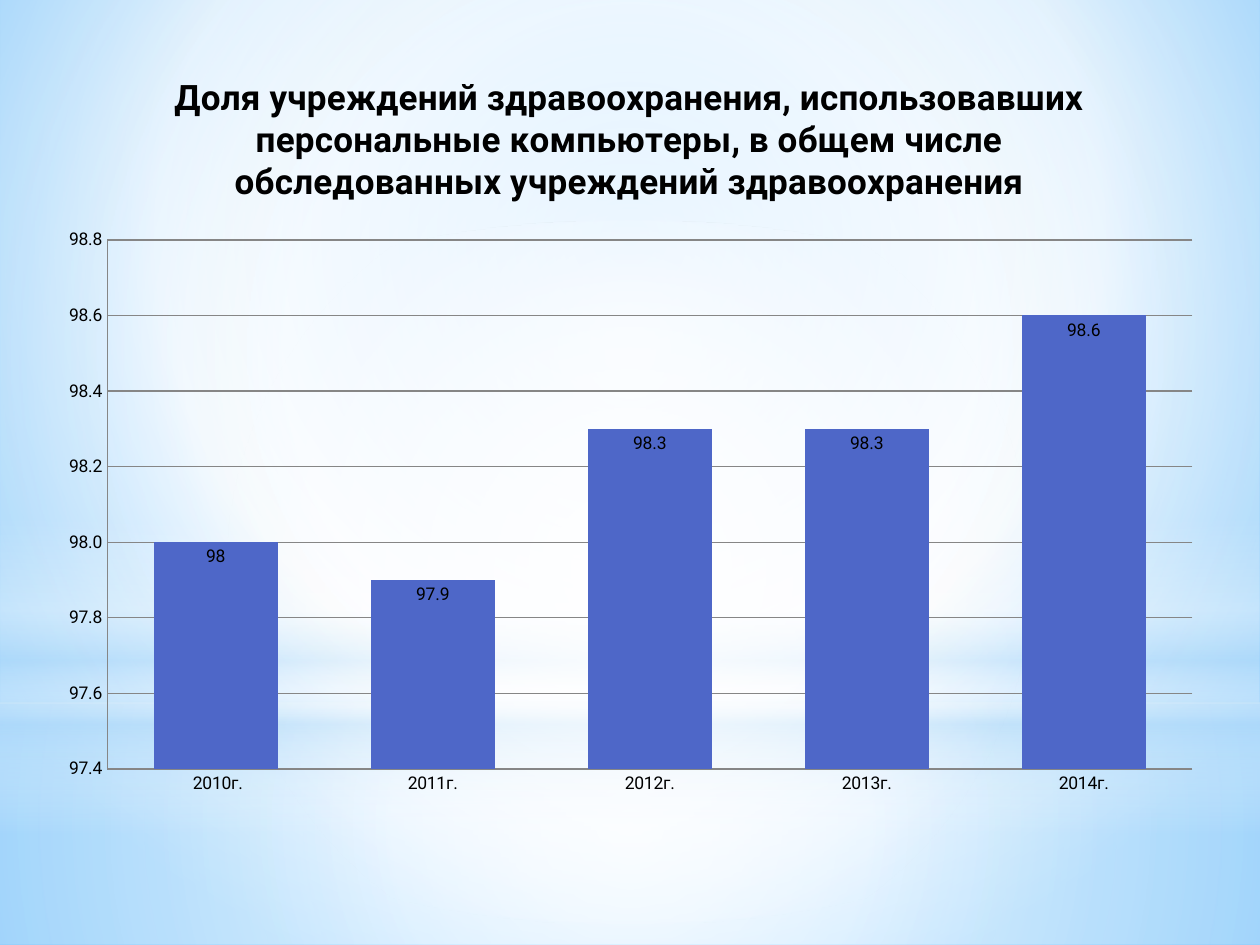
import pptx
import pptx.chart.data
import pptx.dml.color
import pptx.enum.chart
import pptx.enum.shapes
import pptx.oxml
import pptx.oxml.ns
import pptx.util
from pptx.util import Inches

COLORS = {
    "white": "FFFFFF", "pale": "B4DCFA", "sky": "9ED5FF", "azure": "5BB9FF",
    "bar": "4E67C8", "text": "000000", "grid": "868686",
}
FONT = "Roboto"
CENTER = (50, 50, 50, 50)


def rgb(name):
    return pptx.dml.color.RGBColor.from_string(COLORS[name])


def set_gradient(parent, stops, focus=None):
    """Swap the solid fill for a gradient: circular around focus, or top to bottom."""
    stop_xml = "".join(
        f'<a:gs pos="{position * 1000}"><a:srgbClr val="{COLORS[color]}">'
        f'<a:alpha val="{alpha * 1000}"/></a:srgbClr></a:gs>'
        for position, color, alpha in stops)
    if focus:
        edges = " ".join(f'{side}="{value * 1000}"' for side, value in zip("ltrb", focus))
        direction = f'<a:path path="circle"><a:fillToRect {edges}/></a:path>'
    else:
        direction = '<a:lin ang="5400000" scaled="0"/>'
    gradient = pptx.oxml.parse_xml(
        f'<a:gradFill {pptx.oxml.ns.nsdecls("a")} rotWithShape="1">'
        f'<a:gsLst>{stop_xml}</a:gsLst>{direction}</a:gradFill>')
    parent.replace(parent.find(pptx.oxml.ns.qn("a:solidFill")), gradient)


presentation = pptx.Presentation()
presentation.slide_width = Inches(10)
presentation.slide_height = Inches(7.5)
slide = presentation.slides.add_slide(presentation.slide_layouts[6])

# Background
slide.background.fill.solid()
background = slide.element.find(".//" + pptx.oxml.ns.qn("p:bgPr"))
set_gradient(background, [(0, "sky", 100), (60, "white", 100), (100, "azure", 100)],
             (20, 10, 20, 60))

# Soft light layers: shape, top, height, stops, focus
RECTANGLE = pptx.enum.shapes.MSO_SHAPE.RECTANGLE
OVAL = pptx.enum.shapes.MSO_SHAPE.OVAL
layers = [
    (RECTANGLE, 5.58, 1.92,
     [(0, "white", 91), (37, "white", 76), (100, "pale", 79)], CENTER),
    (RECTANGLE, 0, 5.58,
     [(0, "white", 89), (48, "white", 62), (100, "pale", 79)], CENTER),
    (RECTANGLE, 4.12, 2.5,
     [(0, "white", 0), (29, "white", 30), (45, "pale", 40),
      (55, "white", 26), (65, "pale", 60), (100, "white", 0)], None),
    (OVAL, 1.75, 5.58, [(0, "white", 100), (56, "white", 0)], CENTER),
]
for kind, top, height, stops, focus in layers:
    shape = slide.shapes.add_shape(kind, 0, Inches(top), Inches(10), Inches(height))
    shape.shadow.inherit = False
    shape.line.fill.background()
    shape.fill.solid()
    set_gradient(shape.element.spPr, stops, focus)

# Column chart
chart_data = pptx.chart.data.CategoryChartData()
chart_data.categories = [" 2010г.", "2011г.", "2012г.", "2013г.", "2014г."]
chart_data.add_series("Series 1", [98, 97.9, 98.3, 98.3, 98.6])
chart = slide.shapes.add_chart(
    pptx.enum.chart.XL_CHART_TYPE.COLUMN_CLUSTERED,
    Inches(0.35), Inches(0.36), Inches(9.29), Inches(6.06), chart_data).chart
chart.has_legend = False
chart.font.name = FONT
chart.font.size = pptx.util.Pt(10)
chart.font.color.rgb = rgb("text")

# Chart title
chart.has_title = True
chart.chart_title.include_in_layout = False
paragraph = chart.chart_title.text_frame.paragraphs[0]
paragraph.text = ("Доля учреждений здравоохранения, использовавших персональные "
                  "компьютеры, в общем числе обследованных учреждений здравоохранения")
paragraph.font.name = FONT
paragraph.font.size = pptx.util.Pt(20)
paragraph.font.bold = True
paragraph.font.color.rgb = rgb("text")

# Axes
value_axis = chart.value_axis
value_axis.minimum_scale = 97.4
value_axis.maximum_scale = 98.8
value_axis.major_unit = 0.2
value_axis.has_major_gridlines = True
value_axis.tick_labels.number_format = "0.0"
value_axis.tick_labels.number_format_is_linked = False
for axis in (chart.category_axis, value_axis):
    axis.major_tick_mark = pptx.enum.chart.XL_TICK_MARK.NONE
    axis.minor_tick_mark = pptx.enum.chart.XL_TICK_MARK.NONE
for line in (chart.category_axis.format.line, value_axis.format.line,
             value_axis.major_gridlines.format.line):
    line.color.rgb = rgb("grid")
    line.width = pptx.util.Pt(0.75)

# Columns and their labels
plot = chart.plots[0]
plot.gap_width = 75
plot.overlap = 40
plot.vary_by_categories = False
series = plot.series[0]
series.format.fill.solid()
series.format.fill.fore_color.rgb = rgb("bar")
labels = series.data_labels
labels.show_value = True
labels.position = pptx.enum.chart.XL_LABEL_POSITION.INSIDE_END
labels.number_format = "General"
labels.number_format_is_linked = False

# Plot area as fractions of the chart frame
plot_area = chart.element.find(".//" + pptx.oxml.ns.qn("c:plotArea"))
for layout in plot_area.findall(pptx.oxml.ns.qn("c:layout")):
    plot_area.remove(layout)
sizes = "".join(f'<c:{side} val="{value}"/>' for side, value in
                (("x", 0.054), ("y", 0.255), ("w", 0.927), ("h", 0.693)))
plot_area.insert(0, pptx.oxml.parse_xml(
    f'<c:layout {pptx.oxml.ns.nsdecls("c")}><c:manualLayout>'
    '<c:layoutTarget val="inner"/><c:xMode val="edge"/><c:yMode val="edge"/>'
    f'{sizes}</c:manualLayout></c:layout>'))

presentation.save("out.pptx")
